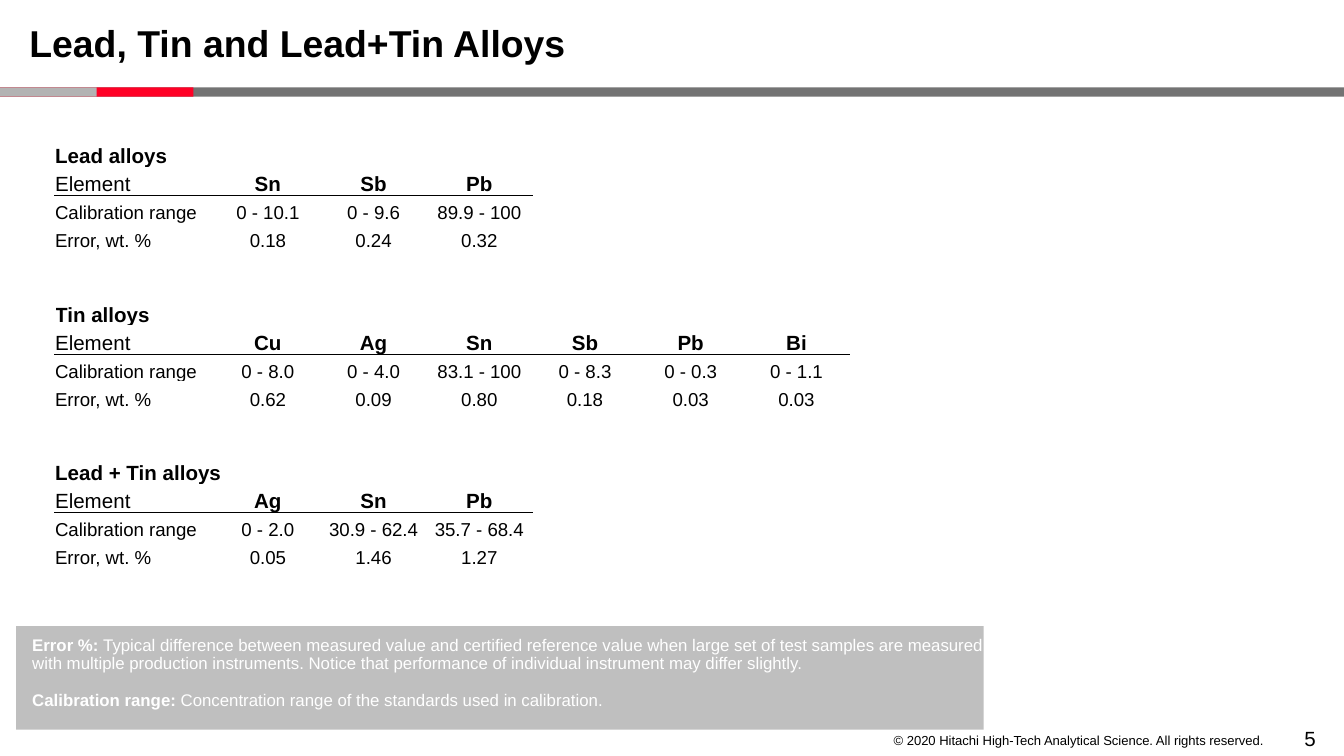
from dataclasses import dataclass

from lxml import etree
from pptx import Presentation
from pptx.dml.color import RGBColor
from pptx.enum.shapes import MSO_SHAPE
from pptx.enum.text import MSO_ANCHOR, PP_ALIGN
from pptx.oxml.ns import qn
from pptx.util import Inches, Pt

RECTANGLE = MSO_SHAPE.RECTANGLE
LEFT, CENTER, RIGHT = PP_ALIGN.LEFT, PP_ALIGN.CENTER, PP_ALIGN.RIGHT
TOP, MIDDLE, BOTTOM = MSO_ANCHOR.TOP, MSO_ANCHOR.MIDDLE, MSO_ANCHOR.BOTTOM


@dataclass(frozen=True)
class Theme:
    font: str = "Arial"
    black: str = "000000"
    white: str = "FFFFFF"
    dark_gray: str = "737373"
    red: str = "FF0026"
    light_gray: str = "B3B3B3"
    note_gray: str = "BFBFBF"
    title_size: int = 20
    heading_size: int = 11
    value_size: int = 10
    note_size: int = 9
    footer_size: int = 7
    rule_width: float = 0.5
    line_spacing: float = 0.9


THEME = Theme()

TITLE = "Lead, Tin and Lead+Tin Alloys"
COPYRIGHT = "© 2020 Hitachi High-Tech Analytical Science. All rights reserved."
PAGE_NUMBER = "5"
ROW_LABELS = ("Element", "Calibration range", "Error, wt. %")
ALLOYS = [
    ("Lead alloys", [
        ("Sn", "0 - 10.1", "0.18"),
        ("Sb", "0 - 9.6", "0.24"),
        ("Pb", "89.9 - 100", "0.32"),
    ]),
    ("Tin alloys", [
        ("Cu", "0 - 8.0", "0.62"),
        ("Ag", "0 - 4.0", "0.09"),
        ("Sn", "83.1 - 100", "0.80"),
        ("Sb", "0 - 8.3", "0.18"),
        ("Pb", "0 - 0.3", "0.03"),
        ("Bi", "0 - 1.1", "0.03"),
    ]),
    ("Lead + Tin alloys", [
        ("Ag", "0 - 2.0", "0.05"),
        ("Sn", "30.9 - 62.4", "1.46"),
        ("Pb", "35.7 - 68.4", "1.27"),
    ]),
]
NOTES = [
    ("Error %: ",
     "Typical difference between measured value and certified reference value "
     "when large set of test samples are measured with multiple production "
     "instruments. Notice that performance of individual instrument may differ slightly."),
    ("Calibration range:",
     " Concentration range of the standards used in calibration."),
]
BANDS = [(10, THEME.dark_gray), (1.44, THEME.red), (0.72, THEME.light_gray)]

TABLE_LEFT, TABLE_TOP, TABLE_STEP = 0.41, 1.04, 1.18
TABLE_HEIGHT, LABEL_WIDTH = 0.83, 1.19
VALUE_WIDTH = (5.91 - LABEL_WIDTH) / 6


def format_para(para, align=LEFT):
    para.alignment = align
    para.line_spacing = THEME.line_spacing


def add_span(para, text, size, color=THEME.black, bold=False):
    span = para.add_run()
    span.text = text
    span.font.name = THEME.font
    span.font.size = Pt(size)
    span.font.bold = bold
    span.font.color.rgb = RGBColor.from_string(color)


def add_label(page, text, place, size, align=LEFT, bold=False, wrap=True):
    box = page.shapes.add_textbox(*map(Inches, place))
    frame = box.text_frame
    frame.word_wrap = wrap
    frame.vertical_anchor = MIDDLE
    para = frame.paragraphs[0]
    format_para(para, align)
    add_span(para, text, size, bold=bold)


def add_block(page, place, color):
    block = page.shapes.add_shape(RECTANGLE, *map(Inches, place))
    block.shadow.inherit = False
    block.fill.solid()
    block.fill.fore_color.rgb = RGBColor.from_string(color)
    block.line.fill.background()
    return block


def add_rule(cell, side):
    rule = etree.Element(qn(f"a:{side}"), w=str(Pt(THEME.rule_width)))
    fill = etree.SubElement(rule, qn("a:solidFill"))
    etree.SubElement(fill, qn("a:srgbClr"), val=THEME.black)
    cell._tc.get_or_add_tcPr().insert(0, rule)


def fill_cell(cell, text, size, align, bold):
    cell.vertical_anchor = BOTTOM
    cell.margin_left = cell.margin_right = cell.margin_top = cell.margin_bottom = 0
    para = cell.text_frame.paragraphs[0]
    format_para(para, align)
    add_span(para, text, size, bold=bold)


def add_alloy_table(page, top, heading, elements):
    columns = [ROW_LABELS, *elements]
    widths = [LABEL_WIDTH] + [VALUE_WIDTH] * len(elements)
    frame = page.shapes.add_table(
        len(ROW_LABELS) + 1, len(columns), Inches(TABLE_LEFT), Inches(top),
        Inches(sum(widths)), Inches(TABLE_HEIGHT))
    table = frame.table
    table.first_row = table.horz_banding = False
    for column, width in zip(table.columns, widths):
        column.width = Inches(width)
    for cell in table.iter_cells():
        cell.fill.background()
    table.cell(0, 0).merge(table.cell(0, len(elements)))
    fill_cell(table.cell(0, 0), heading, THEME.heading_size, LEFT, True)
    for column_index, texts in enumerate(columns):
        is_value = column_index > 0
        for row_index, text in enumerate(texts, start=1):
            is_header = row_index == 1
            cell = table.cell(row_index, column_index)
            fill_cell(cell, text,
                      THEME.heading_size if is_header else THEME.value_size,
                      CENTER if is_value else LEFT, is_header and is_value)
        add_rule(table.cell(1, column_index), "lnB")
        add_rule(table.cell(2, column_index), "lnT")


def add_notes(page):
    box = add_block(page, (0.12, 4.66, 7.2, 0.77), THEME.note_gray)
    frame = box.text_frame
    frame.word_wrap = True
    frame.vertical_anchor = TOP
    frame.margin_left, frame.margin_top = Inches(0.12), Inches(0.08)
    frame.margin_right = frame.margin_bottom = 0
    for index, (term, meaning) in enumerate(NOTES):
        para = frame.add_paragraph() if index else frame.paragraphs[0]
        format_para(para)
        if index:
            para.space_before = Pt(10)
        add_span(para, term, THEME.note_size, THEME.white, bold=True)
        add_span(para, meaning, THEME.note_size, THEME.white)


def main():
    deck = Presentation()
    deck.slide_width = Inches(10)
    deck.slide_height = deck.slide_width * 9 // 16
    page = deck.slides.add_slide(deck.slide_layouts[6])
    add_label(page, PAGE_NUMBER, (9.36, 5.38, 0.53, 0.25), THEME.heading_size, RIGHT)
    add_label(page, COPYRIGHT, (6.49, 5.41, 3.01, 0.21), THEME.footer_size, RIGHT, wrap=False)
    for width, color in BANDS:
        add_block(page, (0, 0.65, width, 0.07), color)
    add_label(page, TITLE, (0.12, 0.14, 8.19, 0.4), THEME.title_size, bold=True)
    for index, (heading, elements) in enumerate(ALLOYS):
        add_alloy_table(page, TABLE_TOP + index * TABLE_STEP, heading, elements)
    add_notes(page)
    deck.save("out.pptx")


if __name__ == "__main__":
    main()
